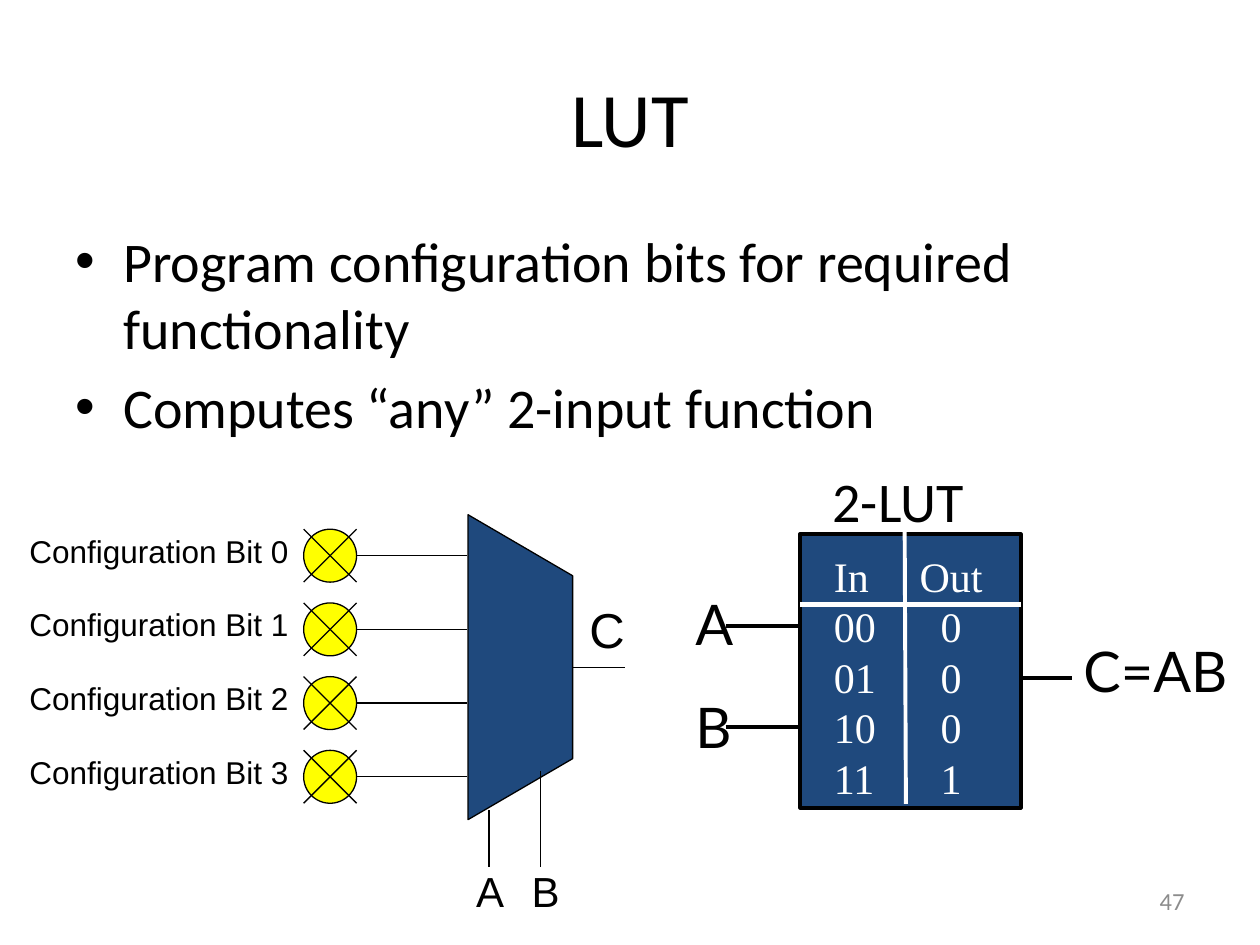
from lxml import etree
from pptx import Presentation
from pptx.dml.color import RGBColor
from pptx.enum.shapes import MSO_CONNECTOR, MSO_SHAPE
from pptx.enum.text import MSO_ANCHOR, PP_ALIGN
from pptx.oxml.ns import qn
from pptx.util import Inches, Pt

STRAIGHT = MSO_CONNECTOR.STRAIGHT
RECTANGLE, OVAL = MSO_SHAPE.RECTANGLE, MSO_SHAPE.OVAL
TRAPEZOID = MSO_SHAPE.FLOWCHART_MANUAL_OPERATION
LEFT, CENTER, RIGHT = PP_ALIGN.LEFT, PP_ALIGN.CENTER, PP_ALIGN.RIGHT
TOP, MIDDLE = MSO_ANCHOR.TOP, MSO_ANCHOR.MIDDLE


class Theme:
    black = RGBColor(0x00, 0x00, 0x00)
    white = RGBColor(0xFF, 0xFF, 0xFF)
    gray = RGBColor(0x8C, 0x8C, 0x8C)
    blue = RGBColor(0x1F, 0x49, 0x7D)
    yellow = RGBColor(0xFF, 0xFF, 0x00)
    body, label, symbol, table = "Calibri", "Arial", "Lato", "Times New Roman"
    title_size, large, medium, normal, small, tiny = 44, 32, 28, 24, 18, 14
    thin, thick, divider = 0.75, 2.25, 3


presentation = Presentation()
presentation.slide_width, presentation.slide_height = Inches(10), Inches(7.5)
slide = presentation.slides.add_slide(presentation.slide_layouts[6])

# All positions are in cells of a grid of 100 columns by 75 rows.
cell = presentation.slide_width / 100


def add_text(lines, box, font, size, color=Theme.black, align=LEFT, anchor=TOP, wrap=False):
    """Add a text box with one paragraph per line; box is in grid cells."""
    shape = slide.shapes.add_textbox(*(round(value * cell) for value in box))
    frame = shape.text_frame
    frame.word_wrap, frame.vertical_anchor = wrap, anchor
    frame.text = "\n".join(lines)
    for paragraph in frame.paragraphs:
        paragraph.alignment = align
        paragraph.font.name, paragraph.font.size = font, Pt(size)
        paragraph.font.color.rgb = color
    return frame.paragraphs


def add_line(x1, y1, x2, y2, width=Theme.thin, color=Theme.black):
    line = slide.shapes.add_connector(
        STRAIGHT, *(round(value * cell) for value in (x1, y1, x2, y2)))
    line.line.width, line.line.color.rgb = Pt(width), color
    etree.SubElement(line._element.spPr, qn("a:effectLst"))


# Title, bullets and page number
add_text(["LUT"], (5, 3, 90, 12.5), Theme.body, Theme.title_size,
         align=CENTER, anchor=MIDDLE, wrap=True)
bullets = add_text(["Program configuration bits for required functionality",
                    "Computes “any” 2-input function"],
                   (5, 17.5, 90, 17.5), Theme.body, Theme.large, wrap=True)
for paragraph in bullets:
    paragraph.space_before = Pt(0.2 * Theme.large)
    properties = paragraph._p.get_or_add_pPr()
    properties.set("marL", str(Inches(0.38)))
    properties.set("indent", str(-Inches(0.38)))
    etree.SubElement(properties, qn("a:buFont")).set("typeface", "Arial")
    bullet = etree.SubElement(properties, qn("a:buChar"))
    bullet.set("char", "•")
    properties.append(properties.find(qn("a:defRPr")))  # the schema wants it last
add_text(["47"], (71.7, 69.5, 23.3, 4), Theme.body, Theme.tiny, Theme.gray,
         align=RIGHT, anchor=MIDDLE, wrap=True)

# Solid shapes: the lookup table, the multiplexer and four configuration bits
bit_left, bit_size, bit_pitch, first_bit = 24.1, 4.2, 5.85, 44.1
bit_right = bit_left + bit_size
bit_rows = [first_bit + bit_pitch * index for index in range(4)]
solids = [(RECTANGLE, (63.5, 42.4, 17.5, 21.7), 0, Theme.blue, Theme.thick),
          (TRAPEZOID, (29.2, 48.8, 24.2, 8.3), 270, Theme.blue, Theme.thin)]
solids += [(OVAL, (bit_left, row - bit_size / 2, bit_size, bit_size), 0,
            Theme.yellow, Theme.thin) for row in bit_rows]
for kind, box, rotation, fill, width in solids:
    shape = slide.shapes.add_shape(kind, *(round(value * cell) for value in box))
    shape.shadow.inherit = False
    shape.rotation = rotation
    shape.fill.solid()
    shape.fill.fore_color.rgb = fill
    shape.line.color.rgb, shape.line.width = Theme.black, Pt(width)

# Crosses, wires and labels of the configuration bits
for index, row in enumerate(bit_rows):
    top, bottom = row - bit_size / 2, row + bit_size / 2
    add_line(bit_left, top, bit_right, bottom)
    add_line(bit_left, bottom, bit_right, top)
    add_line(bit_right, row, 37.1, row)
    add_text([f"Configuration Bit {index}"], (1.35, row - 2.4, 22.8, 4),
             Theme.label, Theme.small)

# Multiplexer output and select inputs
add_line(45.4, 53, 49.6, 53)
add_text(["C"], (45.8, 47.1, 4.8, 5.7), Theme.label, Theme.medium)
for name, column, wire_top, label_left in (("A", 38.8, 64.3, 36.8), ("B", 42.9, 61.2, 41.2)):
    add_line(column, wire_top, column, 68.8)
    add_text([name], (label_left, 68.2, 4.2, 5), Theme.label, Theme.normal)

# Lookup table contents, with the second column centred on a tab stop
truth_table = add_text(["In\tOut", "00\t0", "01\t0", "10\t0", "11\t1"],
                       (65.2, 43.2, 14, 21), Theme.table, Theme.normal, Theme.white)
for paragraph in truth_table:
    properties = paragraph._p.get_or_add_pPr()
    tab_list = etree.Element(qn("a:tabLst"))
    tab = etree.SubElement(tab_list, qn("a:tab"))
    tab.set("pos", str(Inches(0.93)))
    tab.set("algn", "ctr")
    properties.insert(0, tab_list)
add_line(63.5, 48, 81, 48, Theme.divider, Theme.white)
add_line(71.8, 42.2, 71.9, 63.8, Theme.thick, Theme.white)
add_text(["2-LUT"], (65.1, 36.5, 12.5, 6.4), Theme.body, Theme.large)

# Lookup table inputs and output
for name, wire_row, label_top in (("A", 49.7, 46.3), ("B", 57.7, 54.5)):
    add_line(57.6, wire_row, 63.5, wire_row, Theme.thick)
    add_text([name], (54.2, label_top, 4.7, 6.4), Theme.symbol, Theme.large)
add_line(81, 53.8, 85.1, 53.8, Theme.thick)
add_text(["C=AB"], (85, 50, 13.8, 6.4), Theme.symbol, Theme.large, wrap=True)

presentation.save("out.pptx")
